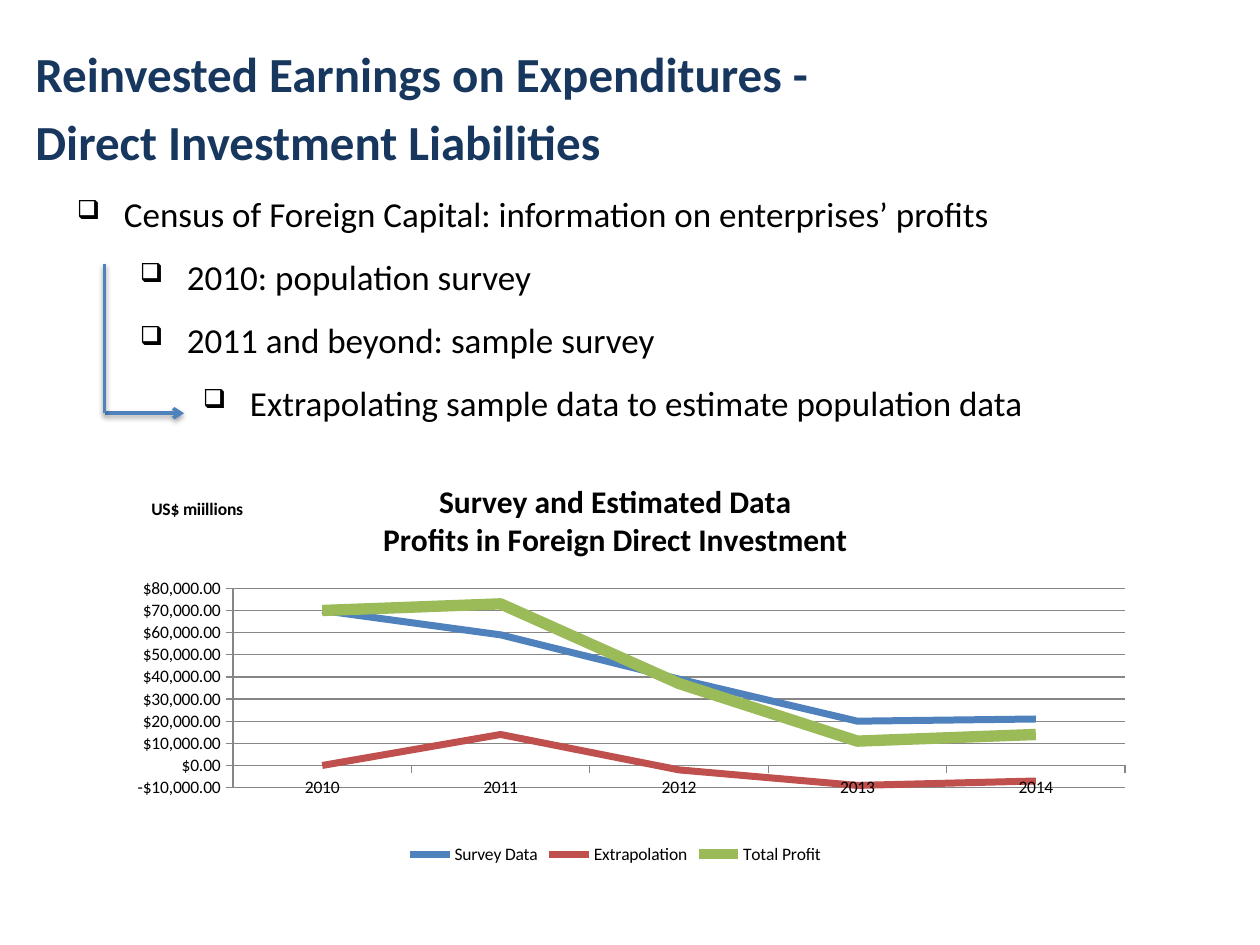
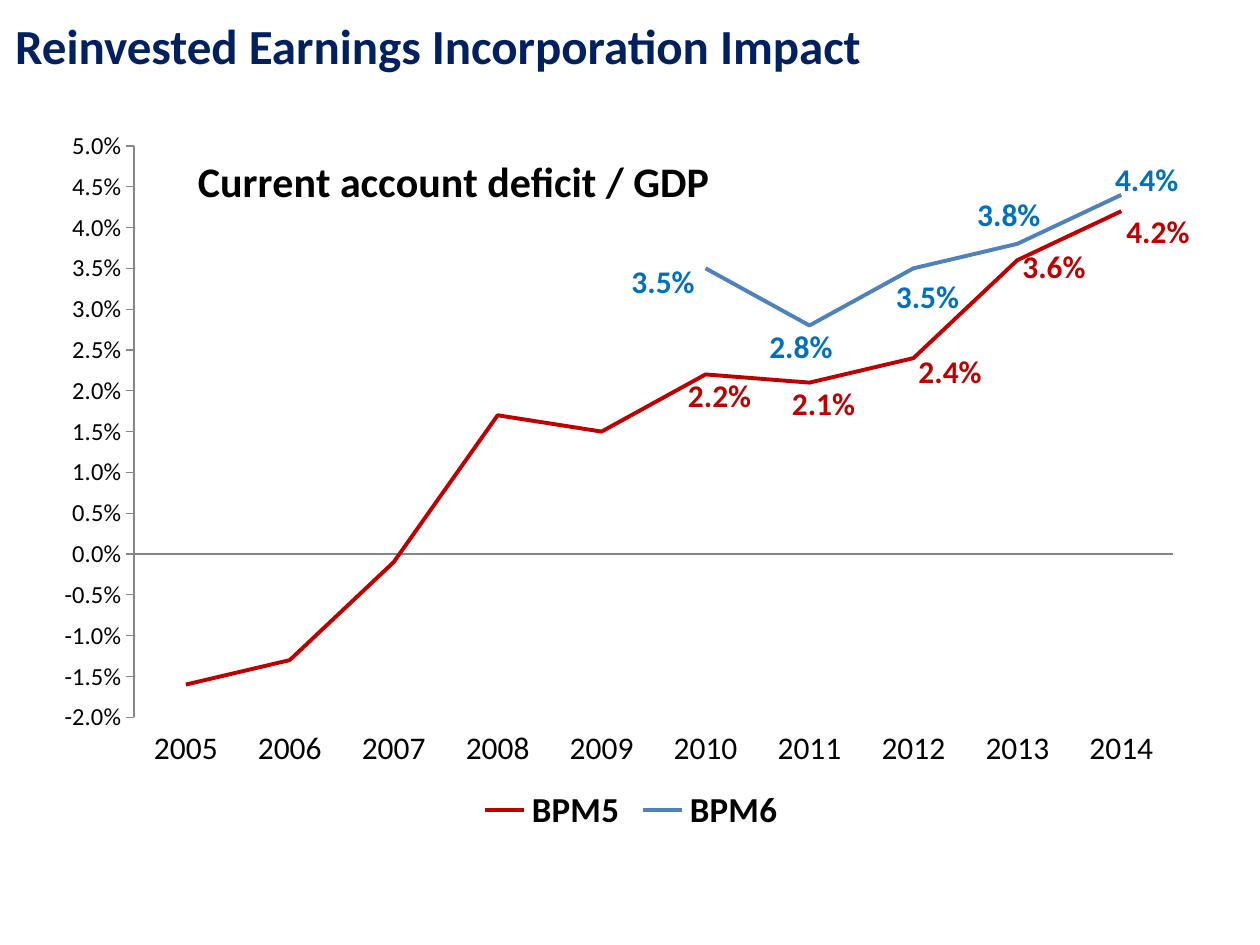
from dataclasses import dataclass

from lxml import etree
from pptx import Presentation
from pptx.chart.data import CategoryChartData
from pptx.dml.color import RGBColor
from pptx.enum.chart import (XL_CHART_TYPE, XL_LABEL_POSITION, XL_LEGEND_POSITION,
                             XL_TICK_LABEL_POSITION, XL_TICK_MARK)
from pptx.enum.shapes import MSO_CONNECTOR
from pptx.enum.text import MSO_ANCHOR, MSO_AUTO_SIZE, PP_ALIGN
from pptx.oxml import parse_xml
from pptx.oxml.ns import nsdecls, qn
from pptx.util import Cm, Pt

LINE_CHART = XL_CHART_TYPE.LINE
LABEL_RIGHT = XL_LABEL_POSITION.RIGHT
LEGEND_BOTTOM = XL_LEGEND_POSITION.BOTTOM
LABELS_LOW = XL_TICK_LABEL_POSITION.LOW
TICK_OUT, TICK_NONE = XL_TICK_MARK.OUTSIDE, XL_TICK_MARK.NONE
STRAIGHT = MSO_CONNECTOR.STRAIGHT
TOP, MIDDLE = MSO_ANCHOR.TOP, MSO_ANCHOR.MIDDLE
LEFT, JUSTIFY = PP_ALIGN.LEFT, PP_ALIGN.JUSTIFY
NO_AUTOFIT = MSO_AUTO_SIZE.NONE
TITLE_ONLY = 5


@dataclass(frozen=True)
class Theme:
    font: str = "Calibri"
    navy: str = "17375E"
    deep_navy: str = "002060"
    text: str = "000000"
    axis: str = "868686"
    blue: str = "4F81BD"
    red: str = "C0504D"
    green: str = "9BBB59"
    dark_red: str = "C00000"
    label_blue: str = "0070C0"
    title_size: int = 28
    body_size: int = 20
    small_size: int = 10
    axis_size: int = 14
    label_size: int = 18
    heading_size: int = 24


THEME = Theme()


@dataclass(frozen=True)
class Series:
    name: str
    values: tuple
    color: str
    width: float


def style_font(font, size, color=THEME.text, bold=False):
    font.name = THEME.font
    font.size = Pt(size)
    font.bold = bold
    font.color.rgb = RGBColor.from_string(color)


def style_runs(text_frame, size, color=THEME.text, bold=False):
    for paragraph in text_frame.paragraphs:
        for run in paragraph.runs:
            style_font(run.font, size, color, bold)


def add_titled_slide(prs, title_text, box, color, anchor):
    slide = prs.slides.add_slide(prs.slide_layouts[TITLE_ONLY])
    title = slide.shapes.title
    title.left, title.top, title.width, title.height = map(Cm, box)
    frame = title.text_frame
    frame.text = title_text
    frame.auto_size = NO_AUTOFIT
    frame.vertical_anchor = anchor
    for index, paragraph in enumerate(frame.paragraphs):
        paragraph.alignment = LEFT
        paragraph.space_before = Pt(0.2 * THEME.title_size if index else 0)
    style_runs(frame, THEME.title_size, color, bold=True)
    return slide


def add_checklist(slide, items, box):
    """Add (level, text) items, each level indented one step further."""
    hanging, step = Cm(0.95), Cm(1.27)
    frame = slide.shapes.add_textbox(*map(Cm, box)).text_frame
    frame.word_wrap = True
    frame.text = "\n".join(text for _, text in items)
    for paragraph, (level, _) in zip(frame.paragraphs, items):
        paragraph.level = level
        paragraph.alignment = JUSTIFY
        paragraph.line_spacing = 1.5
        properties = paragraph._p.get_or_add_pPr()
        properties.set("marL", str(hanging + (level - 1) * step))
        properties.set("indent", str(-hanging))
        etree.SubElement(properties, qn("a:buSzPct")).set("val", "75000")
        etree.SubElement(properties, qn("a:buChar")).set("char", "❑")
    style_runs(frame, THEME.body_size)


def add_shadowed_line(slide, start, end, arrow=False):
    line = slide.shapes.add_connector(STRAIGHT, *map(Cm, start + end))
    line.line.color.rgb = RGBColor.from_string(THEME.blue)
    line.line.width = Pt(2)
    if arrow:
        etree.SubElement(line.line._get_or_add_ln(), qn("a:tailEnd")).set("type", "arrow")
    line._element.spPr.append(parse_xml(
        f'<a:effectLst {nsdecls("a")}><a:outerShdw blurRad="40000" dist="20000" '
        'dir="5400000" rotWithShape="0"><a:srgbClr val="000000">'
        '<a:alpha val="38000"/></a:srgbClr></a:outerShdw></a:effectLst>'))


def set_layout(element, position, x, y, w=None, h=None):
    """Lay out a chart part by fractions; a size marks the inner plot area."""
    layout = element.find(qn("c:layout"))
    if layout is None:
        layout = etree.Element(qn("c:layout"))
        element.insert(position, layout)
    manual = etree.SubElement(layout, qn("c:manualLayout"))
    settings = {"x": x, "y": y}
    if w is not None:
        settings = {"layoutTarget": "inner", "xMode": "edge", "yMode": "edge",
                    **settings, "w": w, "h": h}
    for tag, value in settings.items():
        etree.SubElement(manual, qn(f"c:{tag}")).set("val", str(value))


def place_title(title, x, y):
    set_layout(title._element, 1, x, y)
    manual = title._element.find(qn("c:layout"))[0]
    for index, tag in enumerate(("c:xMode", "c:yMode")):
        mode = etree.Element(qn(tag))
        mode.set("val", "edge")
        manual.insert(index, mode)


def add_line_chart(slide, box, categories, series_list, plot_area, number_format):
    data = CategoryChartData(number_format=number_format)
    data.categories = categories
    for series in series_list:
        data.add_series(series.name, series.values)
    chart = slide.shapes.add_chart(LINE_CHART, *map(Cm, box), data).chart
    style_font(chart.font, THEME.small_size)
    plot = chart.plots[0]
    plot.vary_by_categories = False
    for drawn, series in zip(plot.series, series_list):
        drawn.smooth = False
        drawn.format.line.color.rgb = RGBColor.from_string(series.color)
        drawn.format.line.width = Pt(series.width)
    set_layout(chart._chartSpace.chart.plotArea, 0, *plot_area)
    chart.has_legend = True
    chart.legend.position = LEGEND_BOTTOM
    chart.legend.include_in_layout = False
    return chart


def set_chart_title(chart, text, size):
    chart.has_title = True
    frame = chart.chart_title.text_frame
    frame.text = text
    style_runs(frame, size, bold=True)


def style_axis(axis, size, tick, gridlines=False):
    axis.major_tick_mark = tick
    axis.minor_tick_mark = TICK_NONE
    style_font(axis.tick_labels.font, size)
    axis.has_major_gridlines = gridlines
    lines = [axis.format.line]
    if gridlines:
        lines.append(axis.major_gridlines.format.line)
    for line in lines:
        line.color.rgb = RGBColor.from_string(THEME.axis)
        line.width = Pt(0.75)


def scale_axis(axis, low, high, step, number_format):
    axis.minimum_scale, axis.maximum_scale, axis.major_unit = low, high, step
    axis.tick_labels.number_format = number_format
    axis.tick_labels.number_format_is_linked = False


def label_points(series, offsets, first, color, number_format):
    """Label consecutive points from index first, each shifted by its offset."""
    labels = series.data_labels
    labels.show_value = False
    labels.number_format = number_format
    labels.number_format_is_linked = False
    style_font(labels.font, THEME.label_size, color, bold=True)
    for index, offset in enumerate(offsets, first):
        label = series.points[index].data_label
        label.position = LABEL_RIGHT
        style_font(label.font, THEME.label_size, color, bold=True)
        element = labels._element.xpath(f"c:dLbl[c:idx/@val='{index}']")[0]
        set_layout(element, 1, *offset)
        label_format = etree.Element(qn("c:numFmt"))
        label_format.set("formatCode", number_format)
        label_format.set("sourceLinked", "0")
        element.insert(2, label_format)


def add_profits_chart(slide):
    dollars = '"$"#,##0.00'
    profits = [
        Series("Survey Data", (70000, 59000, 39000, 20000, 21000), THEME.blue, 4),
        Series("Extrapolation", (0, 14000, -2000, -9000, -7000), THEME.red, 4),
        Series("Total Profit", (70000, 73000, 37000, 11000, 14000), THEME.green, 6.5),
    ]
    years = [str(year) for year in range(2010, 2015)]
    chart = add_line_chart(slide, (1.7, 9.32, 21.41, 8.2), years, profits,
                           (0.14, 0.31, 0.84, 0.49), dollars)
    set_chart_title(chart, "Survey and Estimated Data\nProfits in Foreign Direct Investment",
                    THEME.label_size)
    style_axis(chart.category_axis, THEME.small_size, TICK_OUT)
    amounts = chart.value_axis
    style_axis(amounts, THEME.small_size, TICK_OUT, gridlines=True)
    scale_axis(amounts, -10000, 80000, 10000, dollars)
    unit = amounts.axis_title
    unit.text_frame.text = "US$ miillions"
    style_runs(unit.text_frame, THEME.small_size, bold=True)
    direction = unit._element.find(".//" + qn("a:bodyPr"))
    direction.set("rot", "0")
    direction.set("vert", "horz")
    place_title(unit, 0.06, 0.08)


def add_deficit_chart(slide):
    percent = "0.0%"
    first_labelled = 5
    standards = [
        Series("BPM5", (-0.016, -0.013, -0.001, 0.017, 0.015,
                        0.022, 0.021, 0.024, 0.036, 0.042), THEME.dark_red, 2.25),
        Series("BPM6", (None,) * first_labelled + (0.035, 0.028, 0.035, 0.038, 0.044),
               THEME.blue, 2.25),
    ]
    years = [str(year) for year in range(2005, 2015)]
    chart = add_line_chart(slide, (1.3, 2.51, 22.81, 14.4), years, standards,
                           (0.06, 0.03, 0.92, 0.8), percent)
    set_chart_title(chart, "Current account deficit / GDP", THEME.heading_size)
    place_title(chart.chart_title, 0.11, 0.03)
    chart.chart_title._element.find(qn("c:overlay")).set("val", "1")
    style_font(chart.legend.font, THEME.body_size, bold=True)
    style_axis(chart.category_axis, THEME.label_size, TICK_NONE)
    chart.category_axis.tick_label_position = LABELS_LOW
    style_axis(chart.value_axis, THEME.axis_size, TICK_OUT)
    scale_axis(chart.value_axis, -0.02, 0.05, 0.005, percent)
    bpm5, bpm6 = chart.plots[0].series
    label_points(bpm5, [(-0.02, 0.03), (-0.02, 0.03), (0, 0.02), (0, 0.01), (0, 0.03)],
                 first_labelled, THEME.dark_red, percent)
    label_points(bpm6, [(-0.07, 0.02), (-0.04, 0.03), (-0.02, 0.04), (-0.04, -0.04),
                        (-0.01, -0.02)], first_labelled, THEME.label_blue, percent)


def main():
    prs = Presentation()
    prs.slide_width, prs.slide_height = Cm(25.4), Cm(19.05)

    survey = add_titled_slide(
        prs, "Reinvested Earnings on Expenditures -\nDirect Investment Liabilities",
        (0.46, 0.74, 20.45, 2.9), THEME.navy, TOP)
    add_checklist(survey, [
        (1, "Census of Foreign Capital: information on enterprises’ profits"),
        (2, "2010: population survey"),
        (2, "2011 and beyond: sample survey"),
        (3, "Extrapolating sample data to estimate population data"),
    ], (1.3, 3.33, 22.15, 13))
    corner = (2.11, 8.33)
    add_shadowed_line(survey, corner, (3.71, 8.33), arrow=True)
    add_shadowed_line(survey, corner, (2.11, 5.33))
    add_profits_chart(survey)

    impact = add_titled_slide(prs, "Reinvested Earnings Incorporation Impact",
                              (0.05, -0.28, 24.69, 2.39), THEME.deep_navy, MIDDLE)
    add_deficit_chart(impact)

    prs.save("out.pptx")


if __name__ == "__main__":
    main()
